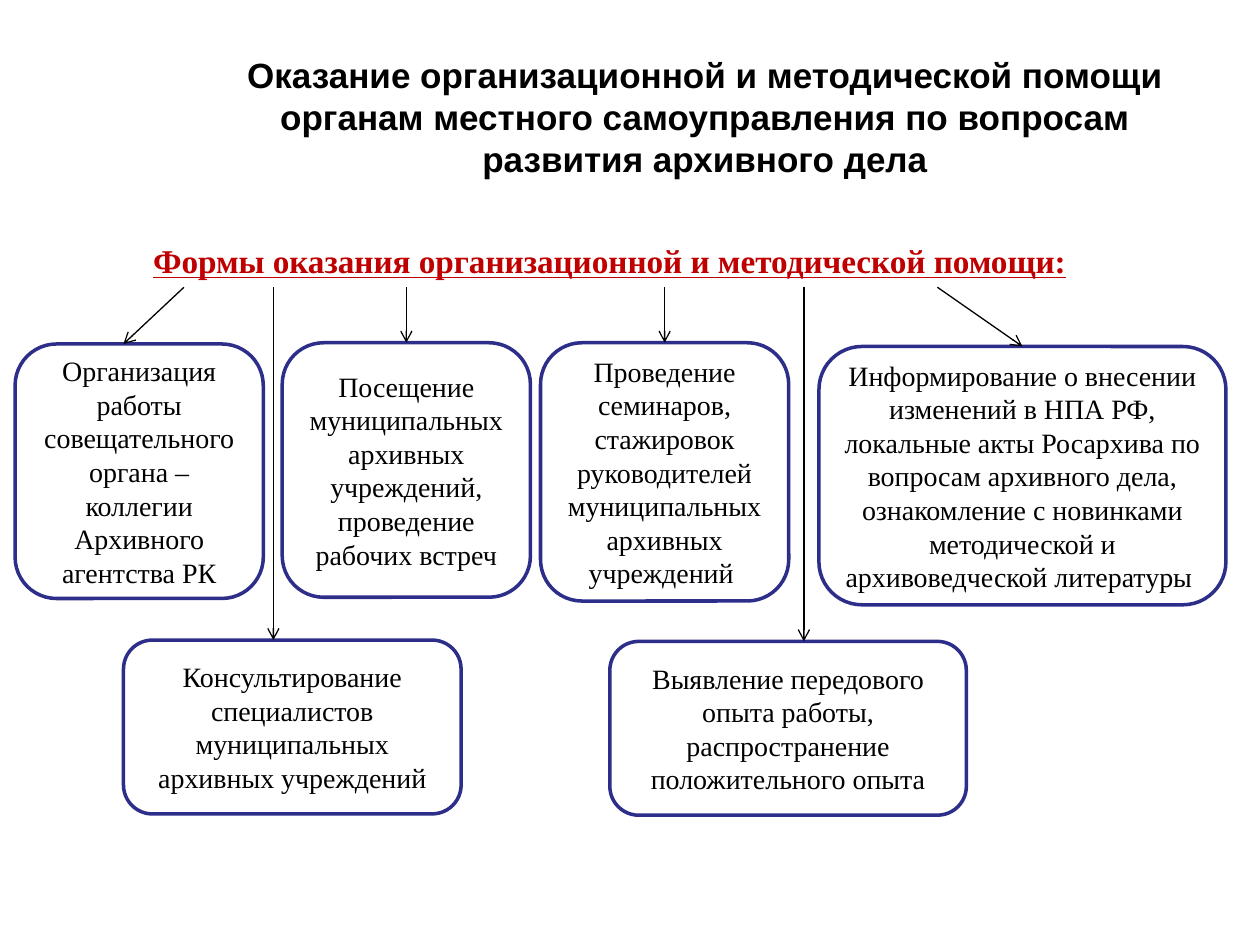
from typing import NamedTuple, Optional

from lxml.etree import SubElement
from pptx import Presentation
from pptx.dml.color import RGBColor
from pptx.enum.shapes import MSO_CONNECTOR as Line, MSO_SHAPE as Shape
from pptx.enum.text import MSO_ANCHOR as Anchor, MSO_AUTO_SIZE as Fit, PP_ALIGN as Align
from pptx.oxml.ns import qn
from pptx.util import Inches, Pt

WIDTH, HEIGHT = Inches(10), Inches(7.5)
COLS, ROWS = 100, 75
SERIF = "Times New Roman"
BLACK, WHITE, RED, NAVY = "000000", "FFFFFF", "C00000", "2D2D8A"
START = 22.8  # row where all arrows begin


class Form(NamedTuple):
    """A box with its arrow; with no tip column the arrow meets the top middle."""
    left: float
    top: float
    wide: float
    high: float
    tail: float
    tip: Optional[float]
    text: str


FORMS = [
    Form(1.2, 27.3, 19.7, 20.2, 14.6, 9.8,
         "Организация работы совещательного органа – коллегии Архивного агентства РК"),
    Form(22.4, 27.2, 19.7, 20.2, 32.25, None,
         "Посещение муниципальных архивных учреждений, проведение рабочих встреч"),
    Form(42.9, 27.2, 19.7, 20.5, 52.75, None,
         "Проведение семинаров, стажировок руководителей муниципальных архивных "
         "учреждений "),
    Form(65, 27.5, 32.3, 20.5, 74.4, None,
         "Информирование о внесении изменений в НПА РФ, локальные акты Росархива "
         "по вопросам архивного дела, ознакомление с новинками методической "
         "и архивоведческой литературы "),
    Form(9.8, 50.8, 26.8, 13.8, 21.7, 21.7,
         "Консультирование специалистов муниципальных архивных учреждений"),
    Form(48.4, 50.9, 28.3, 13.8, 63.8, 63.8,
         "Выявление передового опыта работы, распространение положительного опыта"),
]


def x(col: float) -> int:
    return round(WIDTH * col / COLS)


def y(row: float) -> int:
    return round(HEIGHT * row / ROWS)


def color(code: str) -> RGBColor:
    return RGBColor.from_string(code)


def write(shape, text: str, size: float, font: str = SERIF, ink: str = BLACK,
          bold: bool = False, under: bool = False, anchor=Anchor.MIDDLE) -> None:
    frame = shape.text_frame
    frame.word_wrap = True
    frame.auto_size = Fit.NONE
    frame.vertical_anchor = anchor
    para = frame.paragraphs[0]
    para.text = text
    para.alignment = Align.CENTER
    face = para.font
    face.name, face.size = font, Pt(size)
    face.bold, face.underline = bold, under
    face.color.rgb = color(ink)


def add_box(slide, form: Form):
    box = slide.shapes.add_shape(Shape.ROUNDED_RECTANGLE, x(form.left), y(form.top),
                                 x(form.wide), y(form.high))
    box.shadow.inherit = False
    box.fill.solid()
    box.fill.fore_color.rgb = color(WHITE)
    box.line.color.rgb = color(NAVY)
    box.line.width = Pt(2)
    write(box, form.text, 16)
    return box


def add_arrow(slide, form: Form, box) -> None:
    tip = form.left + form.wide / 2 if form.tip is None else form.tip
    arrow = slide.shapes.add_connector(Line.STRAIGHT, x(form.tail), y(START),
                                       x(tip), y(form.top))
    if form.tip is None:
        arrow.end_connect(box, 0)
    arrow.line.color.rgb = color(BLACK)
    arrow.line.width = Pt(0.75)
    props = arrow.element.spPr
    SubElement(props.find(qn("a:ln")), qn("a:tailEnd"), type="arrow")
    SubElement(props, qn("a:effectLst"))


def main() -> None:
    deck = Presentation()
    deck.slide_width, deck.slide_height = WIDTH, HEIGHT
    slide = deck.slides.add_slide(deck.slide_layouts[5])

    title = slide.shapes.title
    title.left, title.top, title.width, title.height = x(16.9), y(3), x(78.1), y(12.5)
    write(title, "Оказание организационной и методической помощи органам местного "
          "самоуправления по вопросам развития архивного дела", 20, "Arial", bold=True)

    head = slide.shapes.add_textbox(x(10.6), y(18.6), x(75.6), y(4.2))
    write(head, "Формы оказания организационной и методической помощи:", 19,
          ink=RED, bold=True, under=True, anchor=Anchor.TOP)

    boxes = [add_box(slide, form) for form in FORMS]
    for form, box in zip(FORMS, boxes):
        add_arrow(slide, form, box)
    deck.save("out.pptx")


if __name__ == "__main__":
    main()
